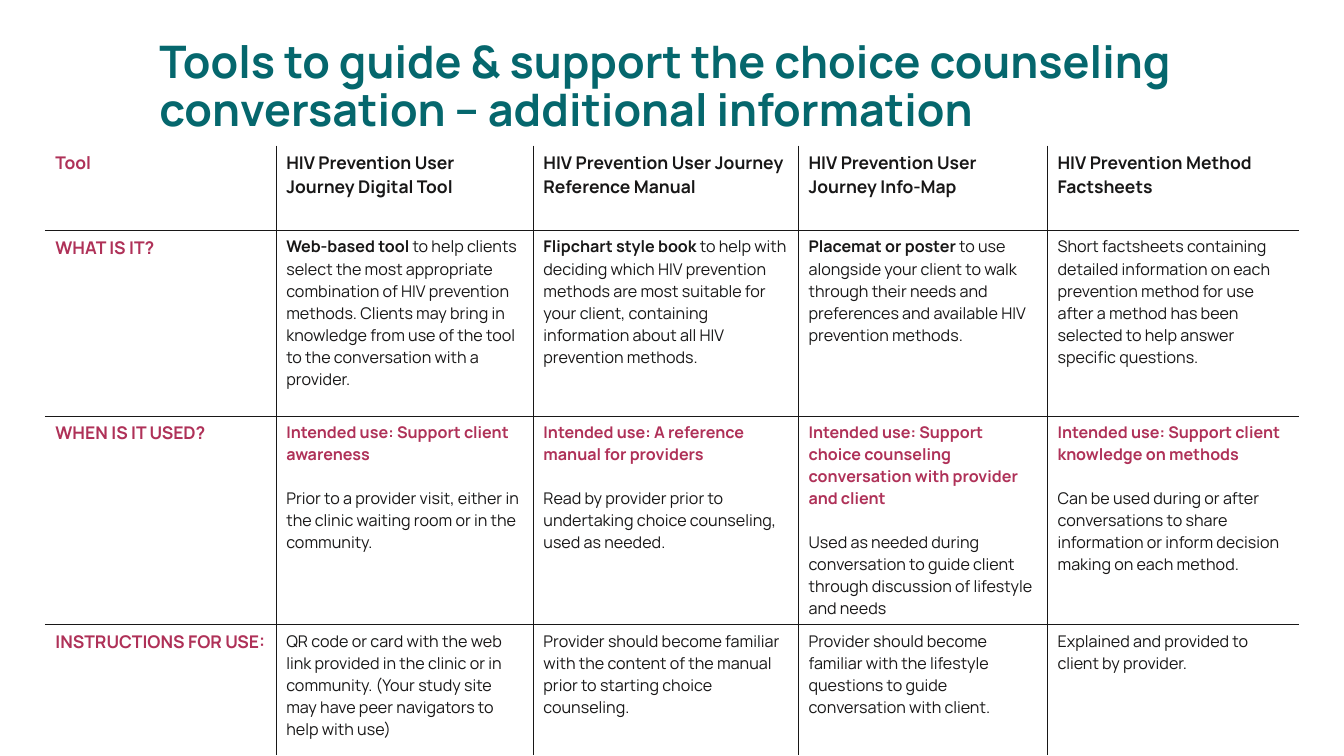
from dataclasses import dataclass
from lxml.etree import SubElement
from pptx import Presentation
from pptx.dml.color import RGBColor as RGB
from pptx.enum.text import MSO_ANCHOR as ANCHOR
from pptx.oxml.ns import qn
from pptx.util import Inches, Pt


@dataclass(frozen=True)
class Theme:
    font: str = "Manrope"
    teal: str = "05676D"
    berry: str = "AF3158"
    ink: str = "181717"
    white: str = "FFFFFF"
    title: float = 32
    head: float = 12.5
    body: float = 11.5


theme = Theme()


def add_text(p, text, size=theme.body, color=theme.ink, bold=False):
    r = p.add_run()
    r.text = text
    r.font.name = theme.font
    r.font.size = Pt(size)
    r.font.bold = bold
    r.font.color.rgb = RGB.from_string(color)


def add_border(cell, side, color):
    ln = SubElement(cell._tc.get_or_add_tcPr(), qn(f"a:ln{side}"), w=str(Pt(1)))
    fill = SubElement(ln, qn("a:solidFill"))
    SubElement(fill, qn("a:srgbClr"), val=color)


labels = ["Tool", "WHAT IS IT?", "WHEN IS IT USED?", "INSTRUCTIONS FOR USE:"]
tools = [
    "HIV Prevention User Journey Digital Tool",
    "HIV Prevention User Journey Reference Manual",
    "HIV Prevention User Journey Info-Map",
    "HIV Prevention Method Factsheets",
]
descriptions = [
    ("Web-based tool ", "to help clients select the most appropriate combination of HIV prevention methods. "
     "Clients may bring in knowledge from use of the tool to the conversation with a provider."),
    ("Flipchart style book ", "to help with deciding which HIV prevention methods are most suitable for your client, "
     "containing information about all HIV prevention methods."),
    ("Placemat or poster ", "to use alongside your client to walk through their needs and preferences "
     "and available HIV prevention methods."),
    ("", "Short factsheets containing detailed information on each prevention method for use "
     "after a method has been selected to help answer specific questions."),
]
uses = [
    ("Support client awareness",
     "Prior to a provider visit, either in the clinic waiting room or in the community."),
    ("A reference manual for providers",
     "Read by provider prior to undertaking choice counseling, used as needed."),
    ("Support choice counseling conversation with provider and client",
     "Used as needed during conversation to guide client through discussion of lifestyle and needs"),
    ("Support client knowledge on methods",
     "Can be used during or after conversations to share information or inform decision making on each method."),
]
instructions = [
    "QR code or card with the web link provided in the clinic or in community. "
    "(Your study site may have peer navigators to help with use)",
    "Provider should become familiar with the content of the manual prior to starting choice counseling.",
    "Provider should become familiar with the lifestyle questions to guide conversation with client.",
    "Explained and provided to client by provider.",
]
col_widths = [2.29, 2.55, 2.63, 2.47, 2.49]
row_heights = [0.84, 1.84, 2.07, 1.3]

prs = Presentation()
prs.slide_width, prs.slide_height = Inches(13.33), Inches(7.5)
s = prs.slides.add_slide(prs.slide_layouts[6])

title = s.shapes.add_textbox(Inches(0.7), Inches(0.25), Inches(12.19), Inches(1.25))
tf = title.text_frame
tf.word_wrap = True
tf.vertical_anchor = ANCHOR.MIDDLE
tf.margin_left = Inches(0.88)
p = tf.paragraphs[0]
p.line_spacing = 0.9
add_text(p, "Tools to guide & support the choice counseling conversation – additional information",
         size=theme.title, color=theme.teal, bold=True)

table = s.shapes.add_table(len(row_heights), len(col_widths), Inches(0.45), Inches(1.45),
                           Inches(sum(col_widths)), Inches(sum(row_heights))).table
table.first_row = table.horz_banding = False
for col, width in zip(table.columns, col_widths):
    col.width = Inches(width)
for row, height in zip(table.rows, row_heights):
    row.height = Inches(height)

last_row, last_col = len(row_heights) - 1, len(col_widths) - 1
for i in range(last_row + 1):
    for j in range(last_col + 1):
        cell = table.cell(i, j)
        outer = {"L": j == 0, "R": j == last_col, "T": i == 0, "B": i == last_row}
        for side, is_outer in outer.items():
            add_border(cell, side, theme.white if is_outer else theme.ink)
        cell.fill.background()

for i, label in enumerate(labels):
    add_text(table.cell(i, 0).text_frame.paragraphs[0], label, size=theme.head, color=theme.berry, bold=True)

for j, (tool, (lead, description), (use, timing), instruction) in enumerate(
        zip(tools, descriptions, uses, instructions), start=1):
    heading, what, when, how = [table.cell(i, j).text_frame for i in range(last_row + 1)]
    add_text(heading.paragraphs[0], tool, size=theme.head, bold=True)
    if lead:
        add_text(what.paragraphs[0], lead, bold=True)
    add_text(what.paragraphs[0], description)
    add_text(when.paragraphs[0], f"Intended use: {use}", color=theme.berry, bold=True)
    p = when.add_paragraph()
    p.space_before = Pt(15.7)
    add_text(p, timing)
    add_text(how.paragraphs[0], instruction)

prs.save("out.pptx")
